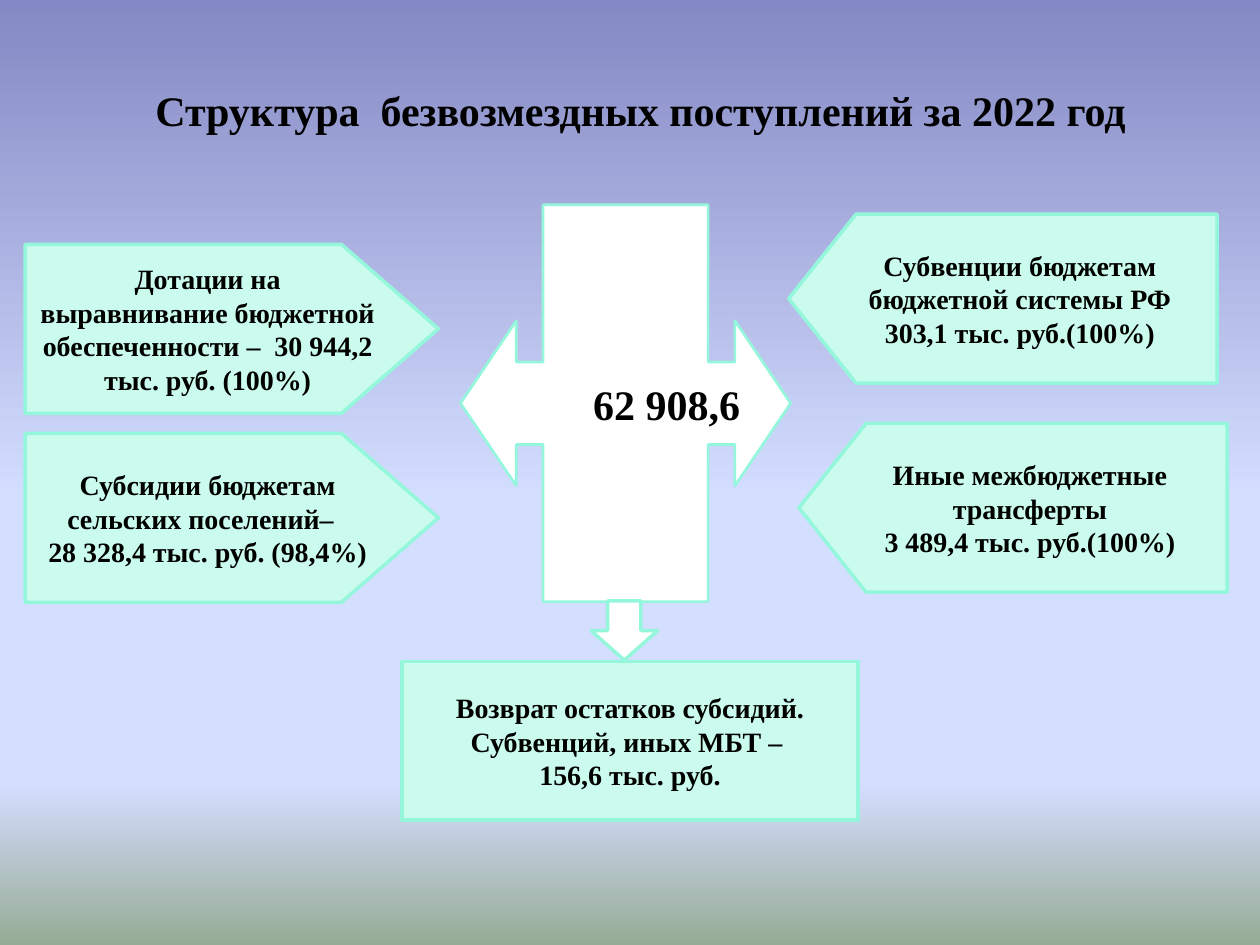
from copy import deepcopy
from dataclasses import dataclass

from lxml.etree import SubElement
from pptx import Presentation
from pptx.dml.color import RGBColor
from pptx.enum.shapes import MSO_SHAPE as Preset
from pptx.enum.text import MSO_ANCHOR as Anchor, PP_ALIGN as Align
from pptx.oxml.ns import qn
from pptx.shapes.autoshape import Shape
from pptx.slide import Slide
from pptx.text.text import TextFrame
from pptx.util import Pt


@dataclass(frozen=True)
class Theme:
    font: str = "Times New Roman"
    heading_size: float = 24
    label_size: float = 16
    text: str = "000000"
    mint: str = "CAFBED"
    outline: str = "94F7DC"
    white: str = "FFFFFF"
    backdrop: tuple = ((0, "8488C4"), (0.53, "D4DEFF"),
                       (0.83, "D4DEFF"), (1, "96AB94"))


@dataclass(frozen=True)
class Block:
    preset: Preset
    left: float
    top: float
    width: float
    height: float
    lines: tuple[str, ...] = ()
    adjustments: tuple[float, ...] = ()
    rotation: float = 0
    fill: str = Theme.mint
    line_width: float = 2
    text_size: float = Theme.label_size


THEME = Theme()
PLATE_HEIGHT = 96.48


def income_plate(left: float, top: float, *lines: str) -> Block:
    """Plate pointing right, towards the total."""
    return Block(Preset.PENTAGON, left, top, 236.16, PLATE_HEIGHT, lines, (0.574,))


def transfer_plate(left: float, top: float, *lines: str) -> Block:
    """Plate pointing left, towards the total."""
    return Block(Preset.PENTAGON, left, top, 244.8, PLATE_HEIGHT, lines, (0.398,), 180)


TOTAL = Block(Preset.UP_DOWN_ARROW_CALLOUT, 244.08, 136.08, 226.8, 188.64,
              ("62 908,6",), (0.25, 0.25, 0.169, 0.5), 270,
              THEME.white, 1.5, THEME.heading_size)

PARTS = (
    income_plate(14.4, 139.68,
                 "Дотации на выравнивание бюджетной обеспеченности –  30 944,2 тыс. руб. (100%)"),
    income_plate(14.4, 247.68,
                 "Субсидии бюджетам сельских поселений–  ", "28 328,4 тыс. руб. (98,4%)"),
    transfer_plate(450.72, 122.4,
                   "Субвенции бюджетам бюджетной системы РФ", "303,1 тыс. руб.(100%)"),
    transfer_plate(456.48, 241.92,
                   "Иные межбюджетные трансферты", "3 489,4 тыс. руб.(100%)"),
    Block(Preset.RECTANGLE, 229.68, 378, 260.64, 90.72,
          ("Возврат остатков субсидий. Субвенций, иных МБТ – ", "156,6 тыс. руб.")),
    Block(Preset.DOWN_ARROW, 337.68, 343.44, 38.16, 33.84, fill=THEME.white),
)


def paint_background(slide: Slide) -> None:
    fill = slide.background.fill
    fill.gradient()
    fill.gradient_angle = 270
    stop_list = slide.background._cSld.find(".//" + qn("a:gsLst"))
    for _ in range(len(THEME.backdrop) - len(stop_list)):
        stop_list.append(deepcopy(stop_list[-1]))
    for stop, (position, color) in zip(fill.gradient_stops, THEME.backdrop):
        stop.position = position
        stop.color.rgb = RGBColor.from_string(color)


def write_lines(frame: TextFrame, lines: tuple[str, ...], size: float) -> None:
    for index, line in enumerate(lines):
        paragraph = frame.add_paragraph() if index else frame.paragraphs[0]
        paragraph.alignment = Align.CENTER
        run = paragraph.add_run()
        run.text = line
        run.font.name = THEME.font
        run.font.size = Pt(size)
        run.font.bold = True
        run.font.color.rgb = RGBColor.from_string(THEME.text)


def draw_title(slide: Slide, title: str) -> None:
    frame = slide.shapes.add_textbox(Pt(54), Pt(37.44), Pt(630), Pt(39.6)).text_frame
    frame.word_wrap = True
    frame.vertical_anchor = Anchor.BOTTOM
    frame.margin_left = frame.margin_right = frame.margin_bottom = 0
    frame.margin_top = Pt(3.6)
    write_lines(frame, (title,), THEME.heading_size)


def draw_block(slide: Slide, block: Block) -> Shape:
    shape = slide.shapes.add_shape(block.preset, Pt(block.left), Pt(block.top),
                                   Pt(block.width), Pt(block.height))
    shape.shadow.inherit = False
    shape.rotation = block.rotation
    for index, value in enumerate(block.adjustments):
        shape.adjustments[index] = value
    shape.fill.solid()
    shape.fill.fore_color.rgb = RGBColor.from_string(block.fill)
    shape.line.color.rgb = RGBColor.from_string(THEME.outline)
    shape.line.width = Pt(block.line_width)
    frame = shape.text_frame
    frame.word_wrap = True
    frame.vertical_anchor = Anchor.MIDDLE
    write_lines(frame, block.lines, block.text_size)
    if block.rotation == 180:  # keep the wording upright
        frame._txBody.bodyPr.set("rot", "10800000")
    return shape


def draw_total(slide: Slide) -> None:
    frame = draw_block(slide, TOTAL).text_frame
    frame.word_wrap = False
    frame._txBody.bodyPr.set("vert", "eaVert")
    # Hanging indent and relative space before the figure
    properties = frame.paragraphs[0]._p.get_or_add_pPr()
    properties.set("marL", str(Pt(21.6)))
    properties.set("indent", str(-Pt(21.6)))
    space_before = SubElement(properties, qn("a:spcBef"))
    SubElement(space_before, qn("a:spcPct")).set("val", "20000")


def main() -> None:
    presentation = Presentation()
    presentation.slide_width, presentation.slide_height = Pt(720), Pt(540)
    slide = presentation.slides.add_slide(presentation.slide_layouts[6])

    # Backdrop and heading
    paint_background(slide)
    draw_title(slide, "Структура  безвозмездных поступлений за 2022 год ")

    # Total, then the parts around it
    draw_total(slide)
    for part in PARTS:
        draw_block(slide, part)

    presentation.save("out.pptx")


if __name__ == "__main__":
    main()
